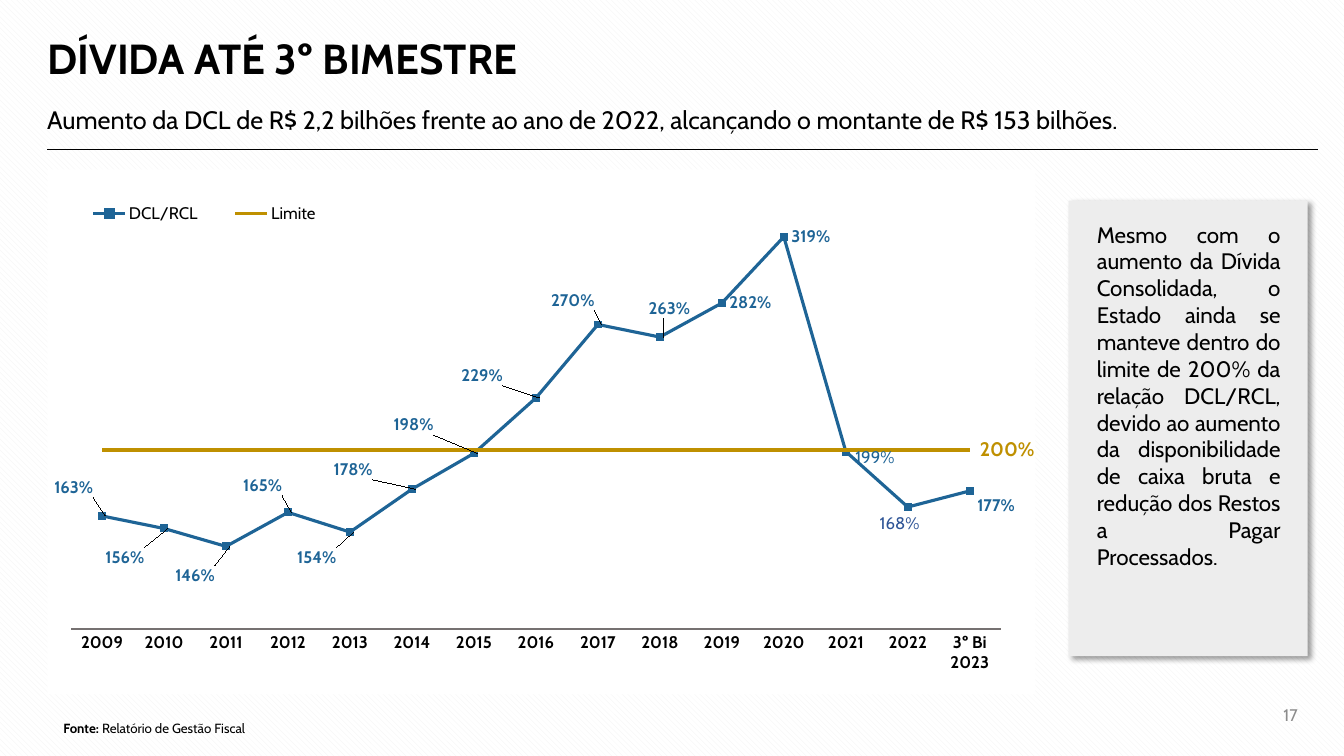
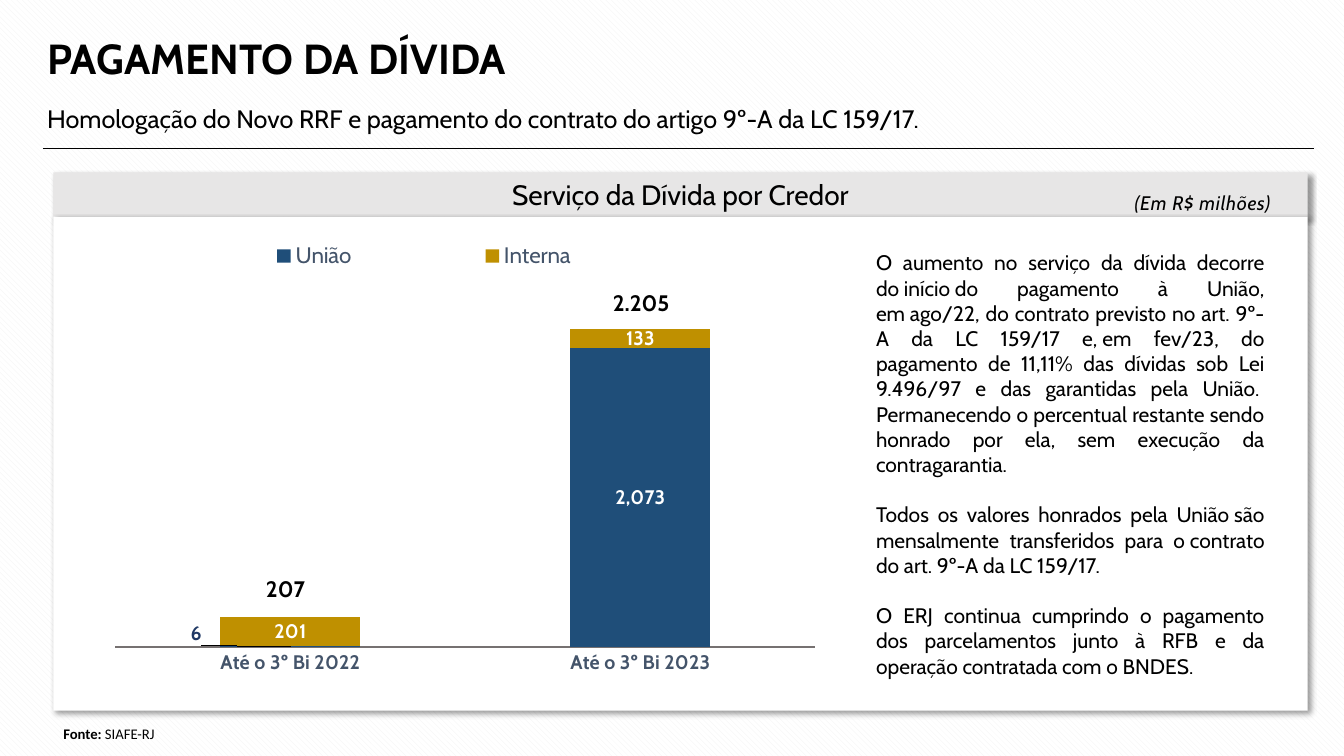
import pptx
import pptx.util
import pptx.dml.color
import pptx.chart.data
import pptx.enum.chart
import pptx.enum.dml
import pptx.enum.shapes
import pptx.enum.text
import pptx.oxml
import pptx.oxml.ns
import lxml.etree

Inches, Pt = pptx.util.Inches, pptx.util.Pt
qn = pptx.oxml.ns.qn
Kind = pptx.enum.chart.XL_CHART_TYPE
Side = pptx.enum.chart.XL_LEGEND_POSITION
Spot = pptx.enum.chart.XL_LABEL_POSITION
Mark = pptx.enum.chart.XL_MARKER_STYLE
Align = pptx.enum.text.PP_ALIGN
Mid = pptx.enum.text.MSO_ANCHOR.MIDDLE
Top = pptx.enum.text.MSO_ANCHOR.TOP

BLACK, WHITE, GRAY, SLATE = "000000", "FFFFFF", "767171", "44546A"
BLUE, NAVY, GOLD = "1E6496", "1F4E79", "BF9000"
TIE = "~"

DEBT = {
    "title": "DÍVIDA ATÉ 3º BIMESTRE",
    "sub": "Aumento da DCL de R$ 2,2 bilhões frente ao ano de 2022, alcançando o montante de R$ 153 bilhões.",
    "top": 0.86,
    "rule": (0.47, 1.48),
    "note": ["Mesmo com o aumento da Dívida Consolidada, o Estado ainda se manteve dentro do limite de 200% da relação DCL/RCL, devido ao aumento da disponibilidade de caixa bruta e redução dos Restos a Pagar Processados."],
    "chart": {
        "kind": Kind.LINE_MARKERS,
        "at": (0.47, 1.68, 9.8, 5.21),
        "cats": [str(year) for year in range(2009, 2023)] + ["3º Bi 2023"],
        "series": [
            ("DCL/RCL", [1.63, 1.56, 1.46, 1.65, 1.54, 1.78, 1.98, 2.29, 2.7, 2.63, 2.82, 3.19, 1.99, 1.68, 1.77]),
            ("Limite", [2] * 15),
        ],
        "fmt": "0%",
        "range": (1, 3.5),
        "inner": (2.4, 2.3, 94.1, 85.2),
        "legend": (1.4, 4.4, 29, 8),
        "side": Side.RIGHT,
        "keys": (12, BLACK),
        "ticks": (12, BLACK),
    },
    "shifts": [(-5.6, -5.4), (-6.7, 5.5), (-5.9, 5.5), (-5.3, -5.1), (-6.1, 4.8),
               (-8.7, -3.7), (-8.9, -5.4), (-8.3, -4.2), (-5.5, -4.6), (-1.9, -5.4),
               (0, 0), (0, 0), (0.2, 1.1), (-3.6, 3.2), (0, 2.8)],
    "plain": {12: BLUE, 13: "2F5597"},
}

PAY = {
    "title": "PAGAMENTO DA DÍVIDA",
    "sub": "Homologação do Novo RRF e pagamento do contrato do artigo 9º-A da LC 159/17.",
    "top": 0.85,
    "rule": (0.43, 1.47),
    "head": "Serviço da Dívida por Credor",
    "unit": "(Em R$ milhões)",
    "note": [
        "O aumento no serviço da dívida decorre do~início~do pagamento à União, em~ago/22, do contrato previsto no art. 9º-A da LC 159/17 e,~em fev/23, do pagamento de 11,11% das dívidas sob Lei 9.496/97 e das garantidas pela União.~ Permanecendo o percentual restante sendo honrado por ela, sem execução da contragarantia.",
        "Todos os valores honrados pela União~são mensalmente transferidos para o~contrato do art. 9º-A da LC 159/17.",
        "O ERJ continua cumprindo o pagamento dos parcelamentos junto à RFB e da operação contratada com o BNDES.",
    ],
    "chart": {
        "kind": Kind.COLUMN_STACKED,
        "at": (0.76, 2.27, 7.54, 4.73),
        "cats": ["Até o 3º Bi 2022", "Até o 3º Bi 2023"],
        "series": [("União", [6, 2073]), ("Interna", [201, 133])],
        "fmt": "#,##0",
        "range": (0, 2500),
        "inner": (5.1, 12.1, 92.1, 75.6),
        "legend": (9.7, 1.7, 72, 8),
        "side": Side.TOP,
        "keys": (16, SLATE),
        "ticks": (14, SLATE),
    },
    "shifts": [(-12.4, -2.7)],
    "sums": [("207", (2.54, 5.66, 0.67, 0.37)), ("2.205", (5.98, 2.82, 0.91, 0.37))],
}


def hue(code):
    return pptx.dml.color.RGBColor.from_string(code)


def style(font, size, color=BLACK, bold=False, italic=False, face="Cabin"):
    font.name, font.size, font.bold, font.italic = face, Pt(size), bold, italic
    font.color.rgb = hue(color)


def write(frame, paras, size, lead="", align=Align.LEFT, anchor=Top, line=None,
          gap=0, track=None, bold=False, **look):
    frame.word_wrap = True
    frame.auto_size = pptx.enum.text.MSO_AUTO_SIZE.NONE
    frame.vertical_anchor = anchor
    for i, words in enumerate(paras):
        para = frame.add_paragraph() if i else frame.paragraphs[0]
        para.alignment = align
        if line:
            para.line_spacing = line
        if i and gap:
            para.space_before = Pt(gap)
        for part, heavy in ((lead, True), (words, bold)):
            if part:
                run = para.add_run()
                run.text = part.replace(TIE, chr(160))
                style(run.font, size, bold=heavy, **look)
                if track:
                    run._r.get_or_add_rPr().set("spc", str(track))


def put(slide, at, paras, size, **look):
    box = slide.shapes.add_textbox(*map(Inches, at))
    write(box.text_frame, paras, size, **look)


def card(slide, at, color):
    box = slide.shapes.add_shape(pptx.enum.shapes.MSO_SHAPE.RECTANGLE, *map(Inches, at))
    box.fill.solid()
    box.fill.fore_color.rgb = hue(color)
    box.line.fill.background()
    box.shadow.inherit = False
    glow = box._element.spPr.find(qn("a:effectLst"))
    glow.append(pptx.oxml.parse_xml(
        f'<a:outerShdw {pptx.oxml.ns.nsdecls("a")} blurRad="{Pt(4)}" dist="{Pt(3)}" '
        f'dir="{45 * 60000}" algn="tl" rotWithShape="0">'
        f'<a:srgbClr val="{BLACK}"><a:alpha val="40000"/></a:srgbClr></a:outerShdw>'))
    return box


def start(deck, data):
    slide = deck.slides.add_slide(deck.slide_layouts[5])
    title = slide.shapes.title
    title.left, title.top, title.width, title.height = map(Inches, (0.37, 0.21, 7.85, 0.79))
    write(title.text_frame, [data["title"]], 30, bold=True, anchor=Mid, line=0.9)
    put(slide, (0.37, data["top"], 12.6, 0.59), [data["sub"]], 18, anchor=Mid, line=1.2)
    x, y = data["rule"]
    rule = slide.shapes.add_connector(
        pptx.enum.shapes.MSO_CONNECTOR.STRAIGHT, *map(Inches, (x, y, x + 12.6, y)))
    rule.line.color.rgb = hue(BLACK)
    rule.line.width = Pt(0.5)
    lxml.etree.SubElement(rule._element.spPr, qn("a:effectLst"))
    return slide


def place(host, spot, nums, modes=()):
    for old in host.findall(qn("c:layout")):
        host.remove(old)
    tags = list(modes) + [(name, num / 100) for name, num in zip("xywh", nums)]
    inside = "".join(f'<c:{name} val="{val}"/>' for name, val in tags)
    host.insert(spot, pptx.oxml.parse_xml(
        f'<c:layout {pptx.oxml.ns.nsdecls("c")}><c:manualLayout>{inside}'
        '</c:manualLayout></c:layout>'))


def nudge(series, shifts):
    for tag, shift in zip(series._element.iter(qn("c:dLbl")), shifts):
        place(tag, 1, shift)
    tags = series._element.find(qn("c:dLbls"))
    for old in tags.findall(qn("c:showLeaderLines")):
        tags.remove(old)
    tags.append(pptx.oxml.parse_xml(
        f'<c:extLst {pptx.oxml.ns.nsdecls("c")}>'
        '<c:ext uri="{CE6537A1-D6FC-4f65-9D91-7224C49458BB}" '
        'xmlns:c15="http://schemas.microsoft.com/office/drawing/2012/chart">'
        '<c15:showLeaderLines val="0"/></c:ext></c:extLst>'))


def draw(slide, data):
    feed = pptx.chart.data.CategoryChartData(number_format=data["fmt"])
    feed.categories = data["cats"]
    for name, vals in data["series"]:
        feed.add_series(name, vals)
    chart = slide.shapes.add_chart(data["kind"], *map(Inches, data["at"]), feed).chart
    style(chart.font, 10)
    chart.has_title = False
    chart.plots[0].vary_by_categories = False
    edge = [("xMode", "edge"), ("yMode", "edge")]
    space = chart._chartSpace
    place(space.find(".//" + qn("c:plotArea")), 0, data["inner"],
          [("layoutTarget", "inner")] + edge)
    space.find(qn("c:chart")).addnext(pptx.oxml.parse_xml(
        f'<c:spPr {pptx.oxml.ns.nsdecls("c", "a")}><a:solidFill><a:srgbClr val="{WHITE}"/>'
        '</a:solidFill><a:ln><a:noFill/></a:ln></c:spPr>'))
    chart.has_legend = True
    chart.legend.position = data["side"]
    chart.legend.include_in_layout = False
    style(chart.legend.font, *data["keys"])
    place(chart.legend._element, 1, data["legend"], edge)
    base, scale = chart.category_axis, chart.value_axis
    base.major_tick_mark = pptx.enum.chart.XL_TICK_MARK.NONE
    base.format.line.color.rgb = hue(GRAY)
    base.format.line.width = Pt(1.5)
    style(base.tick_labels.font, *data["ticks"], bold=True)
    scale.visible = False
    scale.has_major_gridlines = False
    scale.minimum_scale, scale.maximum_scale = data["range"]
    return chart


def label(series, fmt, spot, size, color):
    tags = series.data_labels
    tags.show_value = True
    tags.number_format = fmt
    tags.number_format_is_linked = False
    tags.position = spot
    style(tags.font, size, color, bold=True)


def trend(slide, data):
    info = data["chart"]
    chart = draw(slide, info)
    ratio, limit = chart.plots[0].series
    for series, color, width in ((ratio, BLUE, 2.25), (limit, GOLD, 2.75)):
        series.smooth = False
        series.format.line.color.rgb = hue(color)
        series.format.line.width = Pt(width)
    limit.marker.style = Mark.NONE
    dot = ratio.marker
    dot.style, dot.size = Mark.SQUARE, 5
    dot.format.fill.solid()
    dot.format.fill.fore_color.rgb = hue(BLUE)
    dot.format.line.color.rgb = hue(BLUE)
    label(ratio, info["fmt"], Spot.RIGHT, 12, BLUE)
    plain = data["plain"]
    for i in range(len(info["cats"])):
        tag = ratio.points[i].data_label
        style(tag.font, 12, plain.get(i, BLUE), bold=i not in plain)
        tag.position = Spot.RIGHT
    nudge(ratio, data["shifts"])


def stack(slide, data):
    info = data["chart"]
    chart = draw(slide, info)
    plot = chart.plots[0]
    plot.gap_width, plot.overlap = 150, 100
    for series, color in zip(plot.series, (NAVY, GOLD)):
        series.format.fill.solid()
        series.format.fill.fore_color.rgb = hue(color)
        label(series, info["fmt"], Spot.CENTER, 14, WHITE)
    union = plot.series[0]
    tag = union.points[0].data_label
    style(tag.font, 14, "1F3864", bold=True)
    tag.position = Spot.CENTER
    nudge(union, data["shifts"])


def main():
    deck = pptx.Presentation()
    deck.slide_width, deck.slide_height = Inches(13.33), Inches(7.5)
    back = deck.slide_master.background.fill
    back.patterned()
    back.pattern = pptx.enum.dml.MSO_PATTERN.WIDE_DOWNWARD_DIAGONAL
    back.fore_color.rgb, back.back_color.rgb = hue("F2F2F2"), hue(WHITE)

    slide = start(deck, DEBT)
    card(slide, (10.6, 1.99, 2.37, 4.52), "EDEDED")
    put(slide, (10.78, 2.14, 2.02, 4.14), DEBT["note"], 16, align=Align.JUSTIFY)
    trend(slide, DEBT)
    put(slide, (9.62, 4.29, 0.82, 0.34), ["200%"], 14, color=GOLD, bold=True)
    put(slide, (0.53, 7.1, 2.97, 0.26), ["Relatório de Gestão Fiscal"], 9.5, lead="Fonte: ")
    put(slide, (12.01, 6.89, 0.96, 0.4), ["17"], 12, color="8C8C8C",
        align=Align.RIGHT, anchor=Mid)

    slide = start(deck, PAY)
    head = card(slide, (0.53, 1.71, 12.44, 0.44), "E7E6E6")
    write(head.text_frame, [PAY["head"]], 20, align=Align.CENTER, anchor=Mid)
    card(slide, (0.53, 2.15, 12.44, 4.9), WHITE)
    put(slide, (10.61, 1.8, 2.09, 0.42), [PAY["unit"]], 14, italic=True,
        align=Align.RIGHT, line=1.2, track=50)
    put(slide, (8.59, 2.43, 4.05, 4.64), PAY["note"], 15, align=Align.JUSTIFY, gap=18)
    stack(slide, PAY)
    for total, at in PAY["sums"]:
        put(slide, at, [total], 16, bold=True)
    put(slide, (0.53, 7.14, 5.36, 0.28), ["SIAFE-RJ"], 10.5, lead="Fonte: ", face="Calibri")
    deck.save("out.pptx")


if __name__ == "__main__":
    main()
